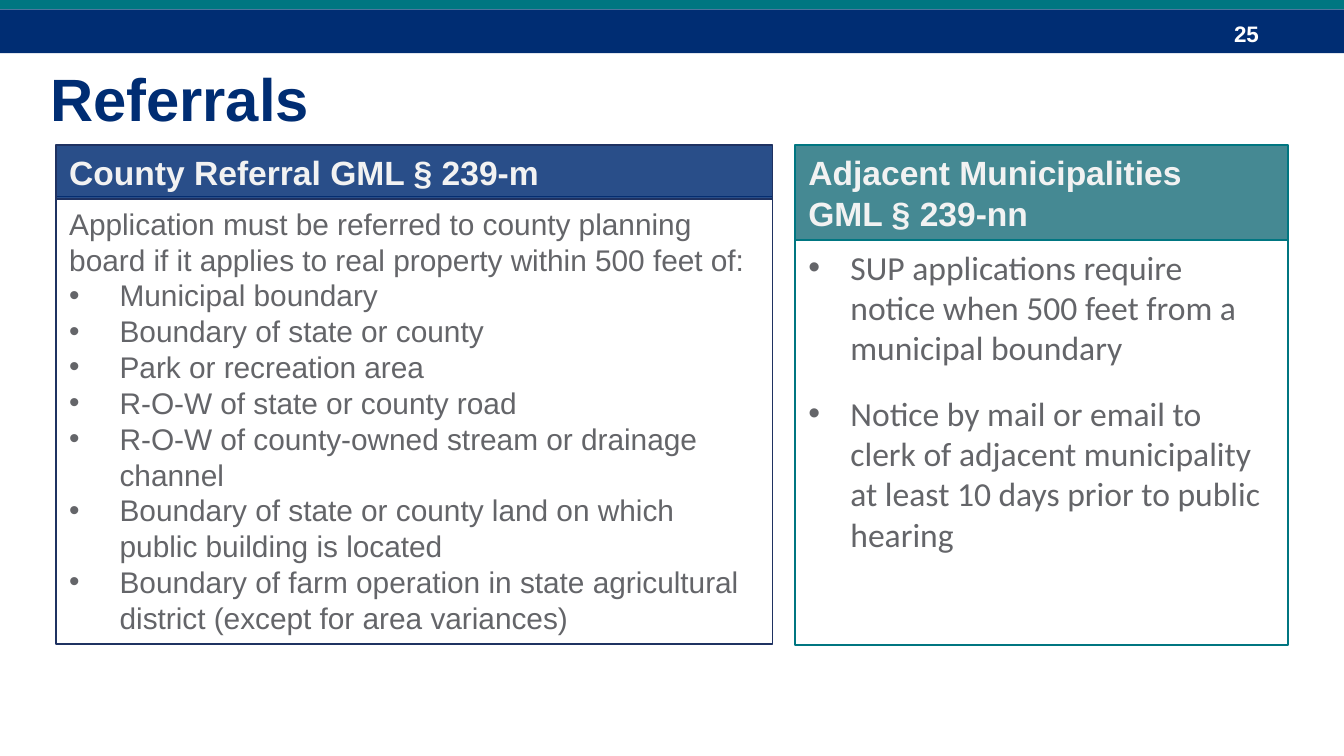
import pptx
import pptx.util
import pptx.dml.color
import pptx.enum.shapes
import pptx.enum.text
import pptx.oxml.ns
from lxml import etree

Pt = pptx.util.Pt
ANCHOR = pptx.enum.text.MSO_ANCHOR

NAVY, TEAL, WHITE = "002D73", "007681", "FFFFFF"
NAVY_LINE, TEAL_FILL = "1F3261", "458993"
GREY, LIGHT = "646569", "F2F2F2"

TITLE = "Referrals"
PAGE_NUMBER = "25"
COUNTY_HEADING = ["County Referral GML § 239-m"]
COUNTY_INTRO = ("Application must be referred to county planning board "
                "if it applies to real property within 500 feet of:")
COUNTY_BULLETS = [
    "Municipal boundary",
    "Boundary of state or county",
    "Park or recreation area",
    "R-O-W of state or county road",
    "R-O-W of county-owned stream or drainage channel",
    "Boundary of state or county land on which public building is located",
    "Boundary of farm operation in state agricultural district (except for area variances)",
]
ADJACENT_HEADING = ["Adjacent Municipalities", "GML § 239-nn"]
ADJACENT_BULLETS = [
    "SUP applications require notice when 500 feet from a municipal boundary",
    "Notice by mail or email to clerk of adjacent municipality "
    "at least 10 days prior to public hearing",
]

SLIDE_W, SLIDE_H = 720, 405
COUNTY_X, COUNTY_W = 30, 384
ADJACENT_X, ADJACENT_W = 426, 264
PANEL_TOP = 77.6


def rgb(value):
    return pptx.dml.color.RGBColor.from_string(value)


def add_box(s, box, fill=None, line=None, opacity=None):
    sp = s.shapes.add_shape(pptx.enum.shapes.MSO_SHAPE.RECTANGLE, *map(Pt, box))
    sp.shadow.inherit = False
    if fill:
        sp.fill.solid()
        sp.fill.fore_color.rgb = rgb(fill)
    else:
        sp.fill.background()
    if opacity:
        color = sp.fill._xPr.find(".//" + pptx.oxml.ns.qn("a:srgbClr"))
        etree.SubElement(color, pptx.oxml.ns.qn("a:alpha"), val=str(opacity * 1000))
    if line:
        sp.line.color.rgb = rgb(line)
        sp.line.width = Pt(0.75)
    else:
        sp.line.fill.background()
    return sp


def write(sp, lines, size, color, font="Arial", bold=False, indent=0, plain=0,
          gap=0, anchor=ANCHOR.MIDDLE):
    """Fill a shape with paragraphs; those after the first `plain` get bullets if indented."""
    tf = sp.text_frame
    tf.word_wrap = True
    tf.vertical_anchor = anchor
    tf.text = "\n".join(lines)
    for i, p in enumerate(tf.paragraphs):
        p.alignment = pptx.enum.text.PP_ALIGN.LEFT
        p.space_before = Pt(gap if i else 0)
        if indent and i >= plain:
            pPr = p._p.get_or_add_pPr()
            pPr.set("marL", str(Pt(indent)))
            pPr.set("indent", str(-Pt(indent)))
            etree.SubElement(pPr, pptx.oxml.ns.qn("a:buFont"), typeface="Arial")
            etree.SubElement(pPr, pptx.oxml.ns.qn("a:buChar"), char="•")
        for r in p.runs:
            r.font.name = font
            r.font.size = Pt(size)
            r.font.bold = bold
            r.font.color.rgb = rgb(color)


prs = pptx.Presentation()
prs.slide_width, prs.slide_height = Pt(SLIDE_W), Pt(SLIDE_H)
s = prs.slides.add_slide(prs.slide_layouts[5])

add_box(s, (0, 5, SLIDE_W, 23.5), NAVY)
add_box(s, (0, 0, SLIDE_W, 5), TEAL)
number = s.shapes.add_textbox(*map(Pt, (654, 7, 54, 21.6)))
write(number, [PAGE_NUMBER], 12, WHITE, bold=True)

title = s.shapes.title
title.left, title.top, title.width, title.height = map(Pt, (19.6, 29.5, 678, 46))
write(title, [TITLE], 32, NAVY, bold=True)

county_body = add_box(s, (COUNTY_X, 105.4, COUNTY_W, 239.6), line=NAVY_LINE)
write(county_body, [COUNTY_INTRO] + COUNTY_BULLETS, 16, GREY, indent=27, plain=1)
county_head = add_box(s, (COUNTY_X, PANEL_TOP, COUNTY_W, 29), NAVY, NAVY_LINE, opacity=84)
write(county_head, COUNTY_HEADING, 18, LIGHT, bold=True)

adjacent_head = add_box(s, (ADJACENT_X, PANEL_TOP, ADJACENT_W, 51), TEAL_FILL, TEAL)
write(adjacent_head, ADJACENT_HEADING, 18, LIGHT, bold=True)
adjacent_body = add_box(s, (ADJACENT_X, PANEL_TOP + 51, ADJACENT_W, 217), line=TEAL)
write(adjacent_body, ADJACENT_BULLETS, 18, GREY, font="Calibri", indent=22.5,
      gap=13.4, anchor=ANCHOR.TOP)

prs.save("out.pptx")
